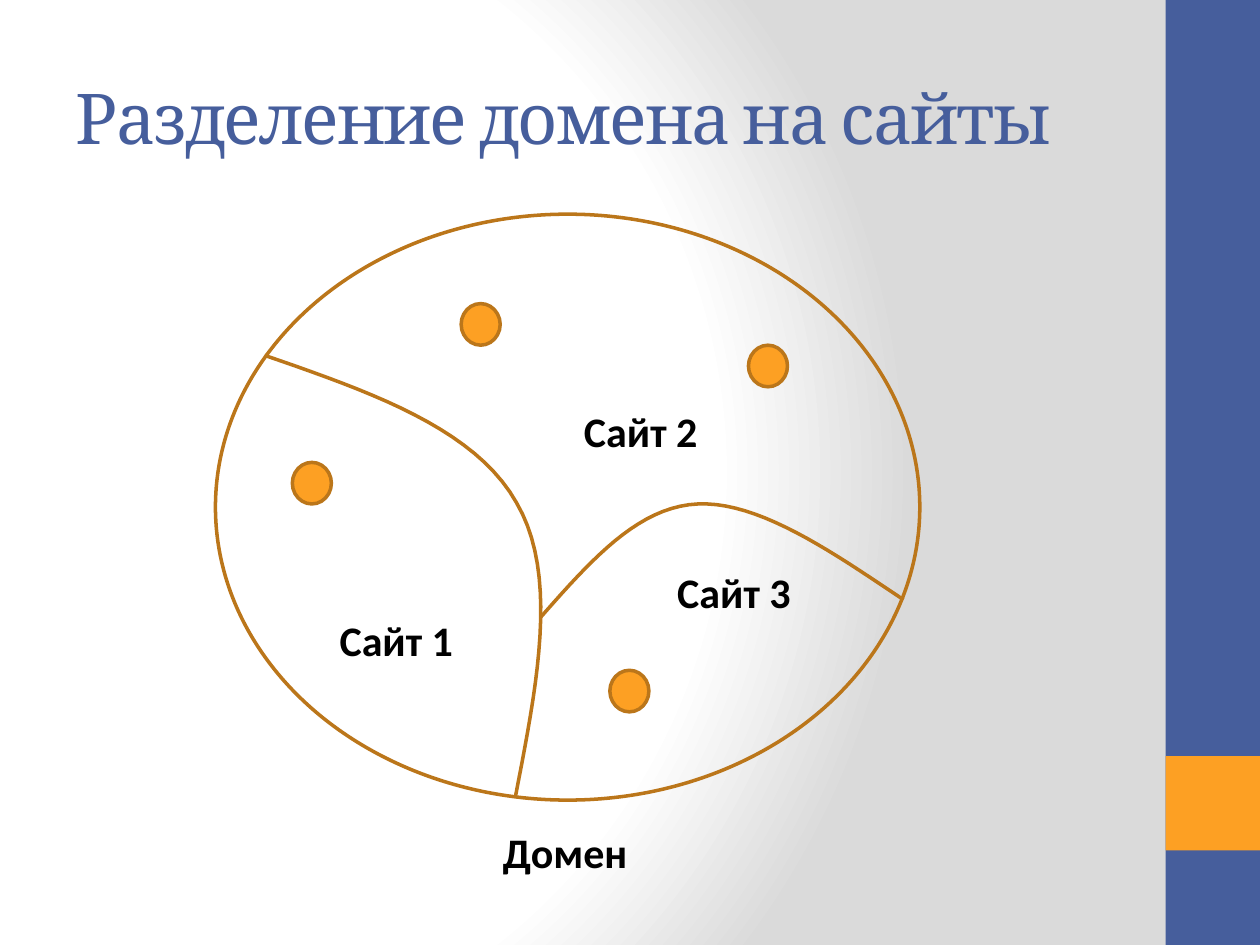
from lxml.etree import SubElement
from pptx import Presentation
from pptx.dml.color import RGBColor
from pptx.enum.shapes import MSO_SHAPE as SHAPE
from pptx.enum.text import MSO_ANCHOR as ANCHOR, MSO_AUTO_SIZE as AUTO_SIZE, PP_ALIGN as ALIGN
from pptx.oxml.ns import qn
from pptx.util import Inches, Pt

BLUE = RGBColor(0x46, 0x5E, 0x9C)
ORANGE = RGBColor(0xFD, 0xA0, 0x23)
BROWN = RGBColor(0xBB, 0x76, 0x1A)
BLACK = RGBColor(0, 0, 0)


def write_text(holder, text, font="Calibri", size=24, color=BLACK, bold=False,
               align=ALIGN.CENTER, anchor=ANCHOR.TOP, fit=AUTO_SIZE.NONE, spacing=0):
    frame = holder.text_frame
    frame.word_wrap = True
    frame.auto_size = fit
    frame.vertical_anchor = anchor
    paragraph = frame.paragraphs[0]
    paragraph.alignment = align
    run = paragraph.add_run()
    run.text = text
    run.font.name = font
    run.font.size = Pt(size)
    run.font.bold = bold
    run.font.color.rgb = color
    if spacing:
        run.font._element.set("spc", str(spacing * 100))


def paint(shape, fill=None, line=None):
    shape.shadow.inherit = False
    if fill is None:
        shape.fill.background()
    else:
        shape.fill.solid()
        shape.fill.fore_color.rgb = fill
    if line is None:
        shape.line.fill.background()
    else:
        shape.line.color.rgb = line
        shape.line.width = Pt(2)


prs = Presentation()
prs.slide_width, prs.slide_height = Inches(10), Inches(7.5)
slide = prs.slides.add_slide(prs.slide_layouts[5])
shapes = slide.shapes

# Background: white glow from the left fading to grey
slide.background.fill.gradient()
gradient = slide.element.find(".//" + qn("a:gradFill"))
for child in list(gradient):
    gradient.remove(child)
stops = SubElement(gradient, qn("a:gsLst"))
for position, color in [(0, "FFFFFF"), (75, "FFFFFF"), (100, "DADADA")]:
    stop = SubElement(stops, qn("a:gs"), pos=str(position * 1000))
    SubElement(stop, qn("a:srgbClr"), val=color)
glow = SubElement(gradient, qn("a:path"), path="circle")
SubElement(glow, qn("a:fillToRect"), l="20000", t="50000", r="100000", b="50000")

# Side band with its accent square
for top, height, color in [(0, 7.5, BLUE), (6, 0.75, ORANGE)]:
    band = shapes.add_shape(SHAPE.RECTANGLE, Inches(9.25), Inches(top),
                            Inches(0.75), Inches(height))
    paint(band, fill=color)

# Title
title = shapes.title
title.left, title.top = Inches(0.5), Inches(0.3)
title.width, title.height = Inches(8.33), Inches(1.25)
write_text(title, "Разделение домена на сайты", font="Cambria", size=40, color=BLUE,
           align=ALIGN.LEFT, anchor=ANCHOR.MIDDLE, spacing=-1)

# Domain outline
domain = shapes.add_shape(SHAPE.OVAL, Inches(1.71), Inches(1.7), Inches(5.59), Inches(4.65))
paint(domain, line=BROWN)

# Site borders: cubic curves, each three further points being one segment
STEPS = 20
borders = [
    [(2.1, 2.82), (2.94, 3.11), (3.77, 3.4), (4.1, 3.99),
     (4.44, 4.57), (4.26, 5.45), (4.09, 6.33)],
    [(4.29, 4.9), (4.68, 4.46), (5.06, 4.02), (5.54, 4),
     (6.02, 3.98), (6.59, 4.37), (7.17, 4.76)],
]
for controls in borders:
    curve = []
    for first in range(0, len(controls) - 1, 3):
        segment = controls[first:first + 4]
        for step in range(1, STEPS + 1):
            t = step / STEPS
            weights = [(1 - t) ** 3, 3 * t * (1 - t) ** 2, 3 * t ** 2 * (1 - t), t ** 3]
            curve.append([Inches(sum(w * point[axis] for w, point in zip(weights, segment)))
                          for axis in (0, 1)])
    start_x, start_y = controls[0]
    builder = shapes.build_freeform(Inches(start_x), Inches(start_y))
    builder.add_line_segments(curve, close=False)
    paint(builder.convert_to_shape(), line=BROWN)

# Domain controllers
for left, top in [(2.32, 3.67), (3.66, 2.41), (4.84, 5.32), (5.94, 2.74)]:
    node = shapes.add_shape(SHAPE.OVAL, Inches(left), Inches(top), Inches(0.31), Inches(0.33))
    paint(node, fill=ORANGE, line=BROWN)

# Labels
for caption, left, top in [("Домен", 3.66, 6.51), ("Сайт 1", 2.32, 4.83),
                           ("Сайт 2", 4.26, 3.17), ("Сайт 3", 5, 4.45)]:
    label = shapes.add_textbox(Inches(left), Inches(top), Inches(1.65), Inches(0.5))
    write_text(label, caption, bold=True, fit=AUTO_SIZE.SHAPE_TO_FIT_TEXT)

prs.save("out.pptx")
